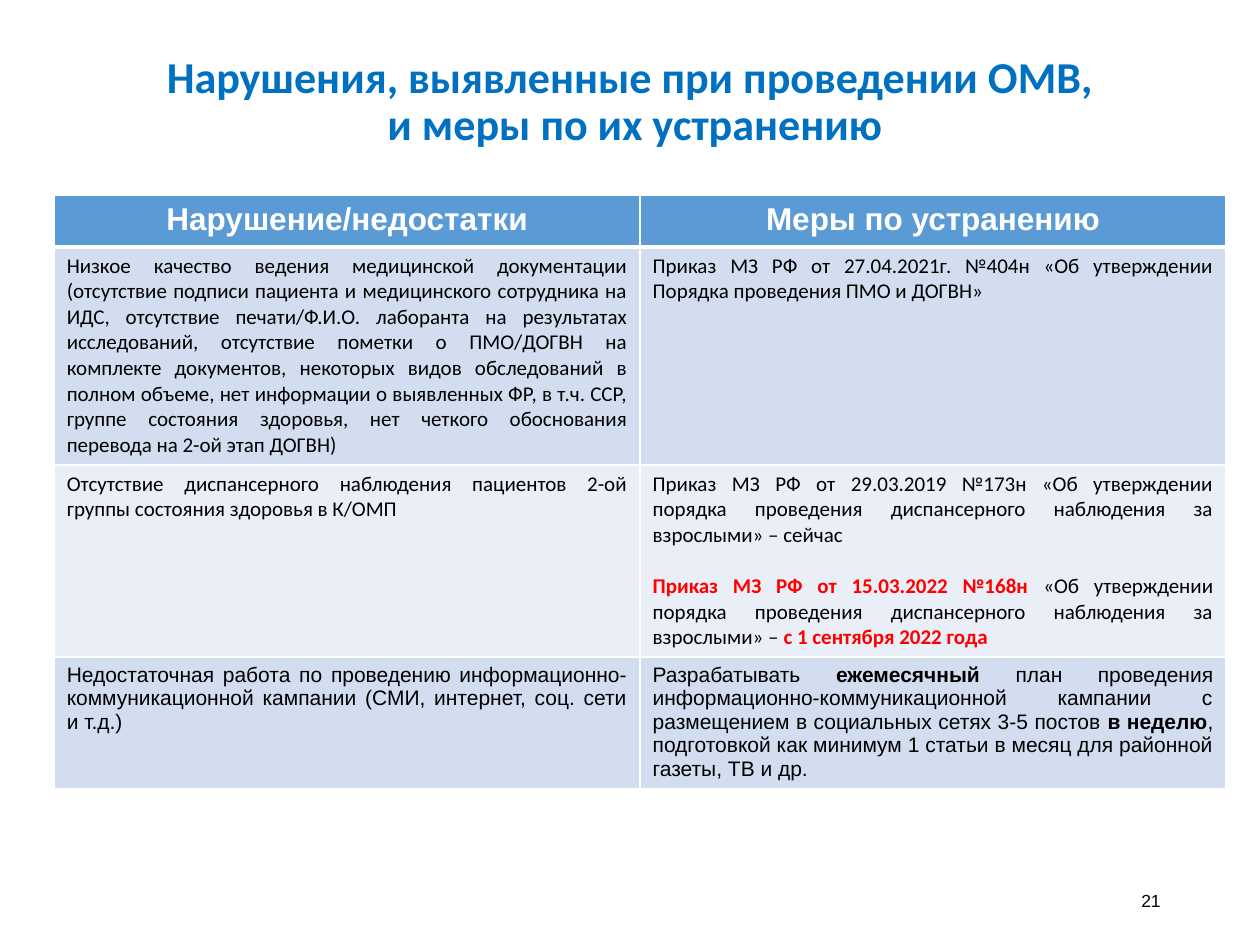
from lxml import etree
from pptx import Presentation
from pptx.dml.color import RGBColor
from pptx.enum.text import MSO_ANCHOR, MSO_AUTO_SIZE, PP_ALIGN
from pptx.oxml.ns import qn
from pptx.util import Inches, Pt

LEFT, CENTER, RIGHT, JUSTIFY = PP_ALIGN.LEFT, PP_ALIGN.CENTER, PP_ALIGN.RIGHT, PP_ALIGN.JUSTIFY
MIDDLE = MSO_ANCHOR.MIDDLE
NO_AUTOFIT = MSO_AUTO_SIZE.NONE
WHITE = RGBColor(0xFF, 0xFF, 0xFF)
BLACK = RGBColor(0, 0, 0)
RED = RGBColor(0xFF, 0, 0)
TITLE_BLUE = RGBColor(0, 0x70, 0xC0)
HEADER_BLUE = RGBColor(0x5B, 0x9B, 0xD5)
BANDS = (RGBColor(0xD2, 0xDE, 0xEF), RGBColor(0xEA, 0xEF, 0xF7))

ROW_HEIGHTS = (0.41, 1.73, 1.52, 1.05)
COLUMN_WIDTH = 4.65
PARAGRAPH_GAP = Pt(14.65)
TITLE = "Нарушения, выявленные при проведении ОМВ,\v и меры по их устранению"
HEADERS = ("Нарушение/недостатки", "Меры по устранению")

PLAIN = (False, BLACK)
BOLD = (True, BLACK)
ALERT = (True, RED)

BODY_ROWS = [
    ("Calibri",
     [[("Низкое качество ведения медицинской документации (отсутствие подписи пациента и "
        "медицинского сотрудника на ИДС, отсутствие печати/Ф.И.О. лаборанта на результатах "
        "исследований, отсутствие пометки о ПМО/ДОГВН на комплекте документов, некоторых видов "
        "обследований в полном объеме, нет информации о выявленных ФР, в т.ч. ССР, группе "
        "состояния здоровья, нет четкого обоснования перевода на 2-ой этап ДОГВН)", PLAIN)]],
     [[("Приказ МЗ РФ от 27.04.2021г. №404н «Об утверждении Порядка проведения ПМО и ДОГВН»",
        PLAIN)]]),
    ("Calibri",
     [[("Отсутствие диспансерного наблюдения пациентов 2-ой группы состояния здоровья в К/ОМП",
        PLAIN)]],
     [[("Приказ МЗ РФ от 29.03.2019 №173н «Об утверждении порядка проведения диспансерного "
        "наблюдения за взрослыми» – сейчас", PLAIN)],
      [("Приказ МЗ РФ от 15.03.2022 №168н ", ALERT),
       ("«Об утверждении порядка проведения диспансерного наблюдения за взрослыми» – ", PLAIN),
       ("с 1 сентября 2022 года", ALERT)]]),
    ("Arial",
     [[("Недостаточная работа по проведению информационно-коммуникационной кампании "
        "(СМИ, интернет, соц. сети и т.д.)", PLAIN)]],
     [[("Разрабатывать ", PLAIN),
       ("ежемесячный ", BOLD),
       ("план проведения информационно-коммуникационной кампании с размещением в социальных "
        "сетях 3-5 постов ", PLAIN),
       ("в неделю", BOLD),
       (", подготовкой как минимум 1 статьи в месяц для районной газеты, ТВ и др.", PLAIN)]]),
]


def format_font(font, name, size, color, bold=False):
    font.name = name
    font.size = Pt(size)
    font.color.rgb = color
    font.bold = bold


def place(shape, left, top, width, height):
    shape.left, shape.top = Inches(left), Inches(top)
    shape.width, shape.height = Inches(width), Inches(height)


def add_title(slide):
    title = slide.shapes.title
    place(title, 0.69, 0.4, 8.62, 0.83)
    frame = title.text_frame
    frame.text = TITLE
    frame.auto_size = NO_AUTOFIT
    frame.vertical_anchor = MIDDLE
    paragraph = frame.paragraphs[0]
    paragraph.alignment = CENTER
    paragraph.line_spacing = 0.9
    format_font(paragraph.font, "Calibri", 25.2, TITLE_BLUE, True)
    for run in paragraph.runs:
        format_font(run.font, "Calibri", 25.2, TITLE_BLUE, True)


def set_borders(cell, bottom_width):
    properties = cell._tc.get_or_add_tcPr()
    widths = (("a:lnL", 1), ("a:lnR", 1), ("a:lnT", 1), ("a:lnB", bottom_width))
    for position, (tag, width) in enumerate(widths):
        line = etree.Element(qn(tag), w=str(Pt(width)))
        fill = etree.SubElement(line, qn("a:solidFill"))
        etree.SubElement(fill, qn("a:srgbClr"), val=str(WHITE))
        properties.insert(position, line)


def fill_cell(cell, paragraphs, font_name, size, alignment, color, bottom_width=1):
    cell.fill.solid()
    cell.fill.fore_color.rgb = color
    set_borders(cell, bottom_width)
    for index, runs in enumerate(paragraphs):
        frame = cell.text_frame
        paragraph = frame.add_paragraph() if index else frame.paragraphs[0]
        paragraph.alignment = alignment
        if index:
            paragraph.space_before = PARAGRAPH_GAP
        for text, (bold, text_color) in runs:
            run = paragraph.add_run()
            run.text = text
            format_font(run.font, font_name, size, text_color, bold)


def add_violations_table(slide):
    columns = len(HEADERS)
    table = slide.shapes.add_table(
        len(ROW_HEIGHTS), columns, Inches(0.43), Inches(1.55),
        Inches(COLUMN_WIDTH * columns), Inches(sum(ROW_HEIGHTS))).table
    for column in table.columns:
        column.width = Inches(COLUMN_WIDTH)
    for row, height in zip(table.rows, ROW_HEIGHTS):
        row.height = Inches(height)
    for column, header in enumerate(HEADERS):
        fill_cell(table.cell(0, column), [[(header, (True, WHITE))]],
                  "Arial", 18, CENTER, HEADER_BLUE, 3)
    for row, (font_name, *contents) in enumerate(BODY_ROWS, start=1):
        for column, paragraphs in enumerate(contents):
            fill_cell(table.cell(row, column), paragraphs,
                      font_name, 12, JUSTIFY, BANDS[(row - 1) % 2])


def add_page_number(slide):
    box = slide.shapes.add_textbox(Inches(7.06), Inches(6.95), Inches(2.25), Inches(0.4))
    frame = box.text_frame
    frame.word_wrap = True
    frame.vertical_anchor = MIDDLE
    frame.text = "21"
    paragraph = frame.paragraphs[0]
    paragraph.alignment = RIGHT
    format_font(paragraph.runs[0].font, "Arial", 10, BLACK)


def main():
    presentation = Presentation()
    presentation.slide_width = Inches(10)
    presentation.slide_height = Inches(7.5)
    slide = presentation.slides.add_slide(presentation.slide_layouts[5])
    add_title(slide)
    add_violations_table(slide)
    add_page_number(slide)
    presentation.save("out.pptx")


if __name__ == "__main__":
    main()
